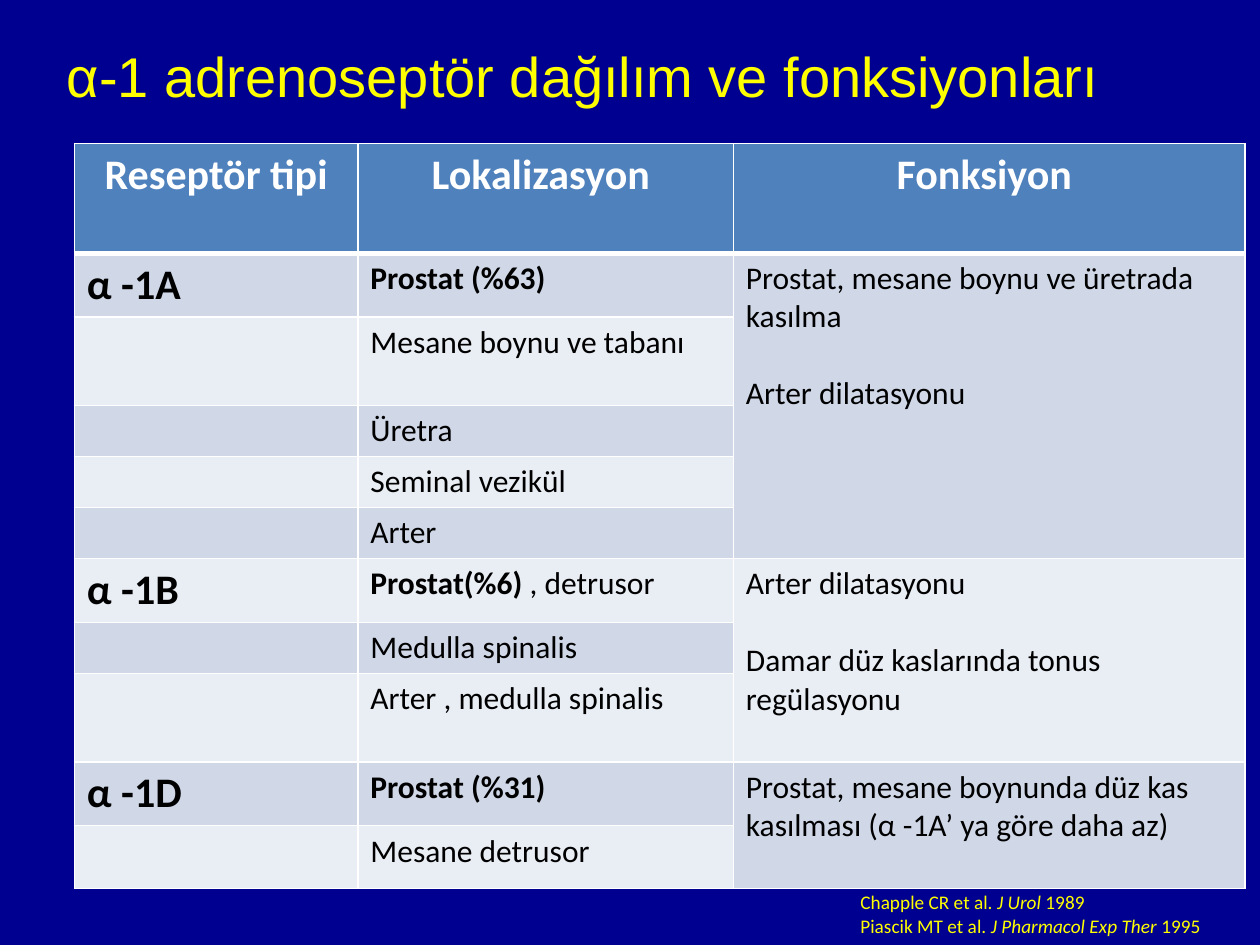
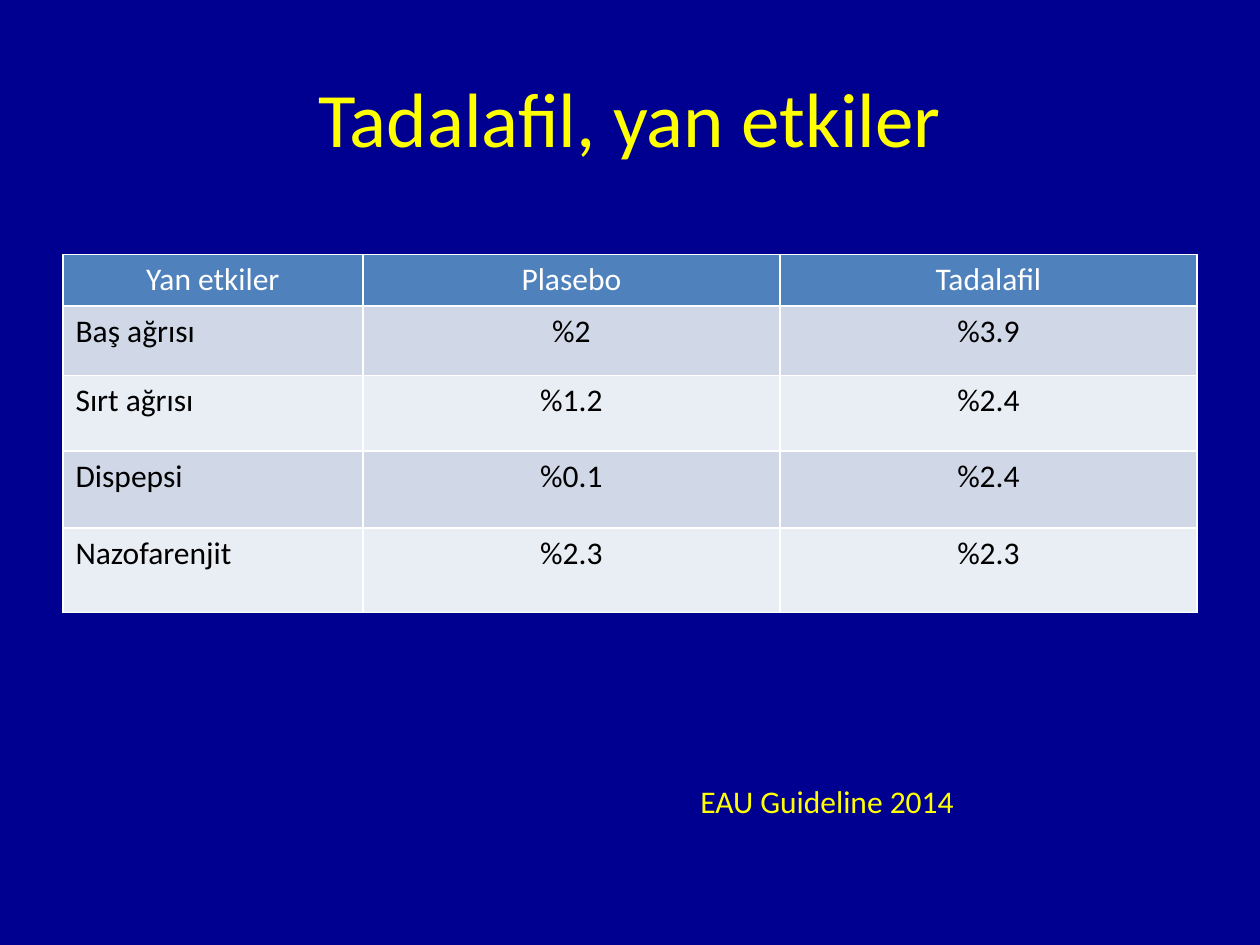
from pptx import Presentation
from pptx.dml.color import RGBColor
from pptx.enum.text import MSO_ANCHOR as Anchor, MSO_AUTO_SIZE as AutoSize, PP_ALIGN as Align
from pptx.oxml import parse_xml
from pptx.oxml.ns import nsdecls
from pptx.util import Inches, Pt

NAVY, YELLOW, WHITE, BLACK = "000090", "FFFF00", "FFFFFF", "000000"
HEADER_BLUE = "4F81BD"
BANDS = "D0D8E8", "E9EDF4"

RECEPTOR_HEADER = ["Reseptör tipi", "Lokalizasyon ", "Fonksiyon "]
RECEPTORS = [
    ("α -1A",
     [[("Prostat (%63)", "b")], "Mesane boynu ve tabanı", "Üretra", "Seminal vezikül", "Arter"],
     ["Prostat, mesane boynu ve üretrada kasılma", "Arter dilatasyonu"]),
    ("α -1B",
     [[("Prostat(%6) ", "b"), (", detrusor", "")], "Medulla spinalis", "Arter , medulla spinalis"],
     ["Arter dilatasyonu", "Damar düz kaslarında tonus regülasyonu"]),
    ("α -1D",
     [[("Prostat (%31)", "b")], "Mesane detrusor"],
     ["Prostat, mesane boynunda düz kas kasılması (α -1A’ ya göre daha az)"]),
]
REFERENCES = [
    [("Chapple CR et al. ", ""), ("J Urol", "i"), (" 1989", "")],
    [("Piascik MT et al. ", ""), ("J Pharmacol Exp Ther", "i"), (" 1995", "")],
]
SIDE_EFFECT_HEADER = ["Yan etkiler", "Plasebo", "Tadalafil"]
SIDE_EFFECTS = [
    ("Baş ağrısı", "%2", "%3.9"),
    ("Sırt ağrısı", "%1.2", "%2.4"),
    ("Dispepsi", "%0.1", "%2.4"),
    ("Nazofarenjit", "%2.3", "%2.3"),
]


def rgb(value):
    return RGBColor.from_string(value)


def write(frame, paragraphs, size, color, align=Align.LEFT, font="Calibri", gap=0):
    for index, spans in enumerate(paragraphs):
        para = frame.add_paragraph() if index else frame.paragraphs[0]
        para.alignment = align
        para.space_before = Pt(gap if index else 0)
        for text, style in [(spans, "")] if isinstance(spans, str) else spans:
            span = para.add_run()
            span.text = text
            span.font.name = font
            span.font.size = Pt(size)
            span.font.bold = "b" in style
            span.font.italic = "i" in style
            span.font.color.rgb = rgb(color)


def place(shape, box):
    shape.left, shape.top, shape.width, shape.height = map(Inches, box)


def add_title_page(deck, title, box, size, font, align, anchor):
    page = deck.slides.add_slide(deck.slide_layouts[5])
    place(page.shapes.title, box)
    frame = page.shapes.title.text_frame
    frame.auto_size = AutoSize.NONE
    frame.vertical_anchor = anchor
    write(frame, [title], size, YELLOW, align, font)
    return page


def add_source_note(page, box, paragraphs, size, anchor=Anchor.TOP):
    frame = page.shapes.add_textbox(*map(Inches, box)).text_frame
    frame.word_wrap = True
    frame.vertical_anchor = anchor
    write(frame, paragraphs, size, YELLOW)


def set_borders(cell, top, bottom):
    properties = cell._tc.get_or_add_tcPr()
    for index, (side, width) in enumerate([("L", 1), ("R", 1), ("T", top), ("B", bottom)]):
        properties.insert(index, parse_xml(
            f'<a:ln{side} {nsdecls("a")} w="{Pt(width)}"><a:solidFill>'
            f'<a:srgbClr val="{WHITE}"/></a:solidFill></a:ln{side}>'))


def add_banded_table(page, left, top, widths, heights, header_rule):
    box = left, top, sum(widths), sum(heights)
    table = page.shapes.add_table(len(heights), len(widths), *map(Inches, box)).table
    table.first_row = table.horz_banding = False
    for column, width in zip(table.columns, widths):
        column.width = Inches(width)
    for index, (row, height) in enumerate(zip(table.rows, heights)):
        row.height = Inches(height)
        for cell in row.cells:
            set_borders(cell, header_rule if index == 1 else 1, 1 if index else header_rule)
            cell.fill.solid()
            cell.fill.fore_color.rgb = rgb(BANDS[(index - 1) % 2] if index else HEADER_BLUE)
    return table


def fill_header(table, labels, size, style=""):
    for column, label in enumerate(labels):
        write(table.cell(0, column).text_frame, [[(label, style)]], size, WHITE, Align.CENTER)


def add_receptor_table(page, left, top):
    heights = [0.87, 0.5, 0.7, 0.4, 0.4, 0.4, 0.5, 0.4, 0.7, 0.5, 0.5]
    table = add_banded_table(page, left, top, [2.25, 2.98, 4.06], heights, header_rule=3)
    fill_header(table, RECEPTOR_HEADER, 24, "b")
    first = 1
    for receptor, locations, functions in RECEPTORS:
        write(table.cell(first, 0).text_frame, [[(receptor, "b")]], 24, BLACK)
        for row, location in enumerate(locations, first):
            write(table.cell(row, 1).text_frame, [location], 18, BLACK)
        function_cell = table.cell(first, 2)
        function_cell.merge(table.cell(first + len(locations) - 1, 2))
        write(function_cell.text_frame, functions, 18, BLACK, gap=22)
        first += len(locations)


def add_side_effect_table(page, left, top):
    heights = [0.41, 0.55, 0.6, 0.61, 0.67]
    table = add_banded_table(page, left, top, [2.38, 3.31, 3.31], heights, header_rule=1)
    fill_header(table, SIDE_EFFECT_HEADER, 18)
    for row, values in enumerate(SIDE_EFFECTS, 1):
        for column, value in enumerate(values):
            align = Align.CENTER if column else Align.LEFT
            write(table.cell(row, column).text_frame, [value], 18, BLACK, align)


def build_receptor_page(deck):
    page = add_title_page(deck, "α-1 adrenoseptör dağılım ve fonksiyonları",
                          (0.43, 0.28, 9.45, 0.8), 32, "Arial", Align.LEFT, Anchor.TOP)
    add_receptor_table(page, 0.59, 1.14)
    add_source_note(page, (6.73, 7.02, 3.15, 0.48), REFERENCES, 11)


def build_side_effect_page(deck):
    page = add_title_page(deck, "Tadalafil, yan etkiler",
                          (0.5, 0.3, 9, 1.25), 44, "Calibri", Align.CENTER, Anchor.MIDDLE)
    add_side_effect_table(page, 0.5, 2.02)
    add_source_note(page, (5.46, 5.73, 4.54, 1.25), ["EAU Guideline 2014"], 18, Anchor.MIDDLE)


def main():
    deck = Presentation()
    deck.slide_width, deck.slide_height = Inches(10), Inches(7.5)
    background = deck.slide_master.background.fill
    background.solid()
    background.fore_color.rgb = rgb(NAVY)
    build_receptor_page(deck)
    build_side_effect_page(deck)
    deck.save("out.pptx")


if __name__ == "__main__":
    main()
